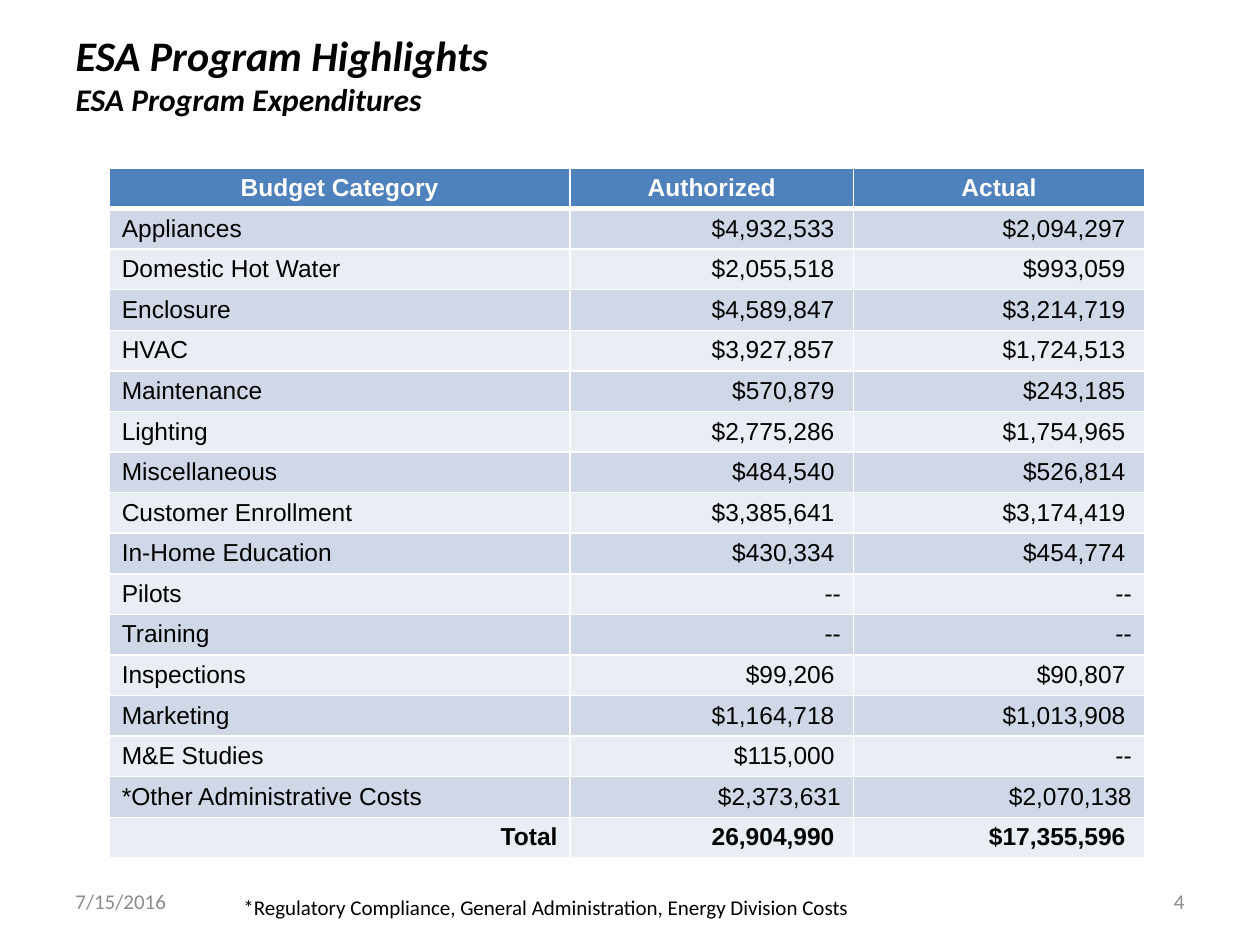
from lxml.etree import SubElement
from pptx import Presentation
from pptx.dml.color import RGBColor
from pptx.enum.text import MSO_ANCHOR, MSO_AUTO_SIZE, PP_ALIGN
from pptx.oxml.ns import qn
from pptx.util import Inches, Pt

COLORS = {
    "text": "000000", "muted": "8C8C8C", "white": "FFFFFF",
    "header": "4F81BD", "odd": "D0D8E8", "even": "E9EDF4",
}
GRID_COLUMNS, GRID_ROWS = 60, 45
TITLE_BOX = (3, 1, 39, 5)
TABLE_BOX = (5.2, 8, 49.3, 32.88)
DATE_BOX = (3, 41.7, 14, 2.4)
NUMBER_BOX = (43, 41.7, 14, 2.4)
NOTE_BOX = (11, 42.3, 31, 1.8)
COLUMN_WEIGHTS = (3.66, 2.25, 2.31)
EDGE_MARGIN, FIGURE_MARGIN = Inches(0.1), Inches(0.15)
BOTTOM_MARGIN = Inches(0.02)

HEADINGS = ("Budget Category", "Authorized", "Actual")
EXPENDITURES = [
    ("Appliances", "$4,932,533", "$2,094,297"),
    ("Domestic Hot Water", "$2,055,518", "$993,059"),
    ("Enclosure", "$4,589,847", "$3,214,719"),
    ("HVAC", "$3,927,857", "$1,724,513"),
    ("Maintenance", "$570,879", "$243,185"),
    ("Lighting", "$2,775,286", "$1,754,965"),
    ("Miscellaneous", "$484,540", "$526,814"),
    ("Customer Enrollment", "$3,385,641", "$3,174,419"),
    ("In-Home Education", "$430,334", "$454,774"),
    ("Pilots", "--", "--"),
    ("Training", "--", "--"),
    ("Inspections", "$99,206", "$90,807"),
    ("Marketing", "$1,164,718", "$1,013,908"),
    ("M&E Studies", "$115,000", "--"),
    ("*Other Administrative Costs", "$2,373,631", "$2,070,138"),
    ("Total", "26,904,990", "$17,355,596"),
]
FLUSH_ROWS = {"*Other Administrative Costs"}


def grid_box(deck, box):
    """Turn grid columns and rows into slide lengths."""
    column, row = deck.slide_width / GRID_COLUMNS, deck.slide_height / GRID_ROWS
    left, top, width, height = box
    return int(left * column), int(top * row), int(width * column), int(height * row)


def style_font(font, color, **values):
    """Set font attributes and colour."""
    for name, value in values.items():
        setattr(font, name, value)
    font.color.rgb = RGBColor.from_string(COLORS[color])


def add_title(deck, page, box):
    """Fill the title placeholder with a heading and a smaller second line."""
    title = page.shapes.title
    for name, value in zip(("left", "top", "width", "height"), grid_box(deck, box)):
        setattr(title, name, value)
    frame = title.text_frame
    frame.word_wrap = True
    frame.auto_size = MSO_AUTO_SIZE.NONE
    frame.vertical_anchor = MSO_ANCHOR.MIDDLE
    para = frame.paragraphs[0]
    para.alignment = PP_ALIGN.LEFT
    lines = (("ESA Program Highlights", 24), ("ESA Program Expenditures", 18))
    for index, (words, size) in enumerate(lines):
        if index:
            para.add_line_break()
        span = para.add_run()
        span.text = words
        style_font(span.font, "text", name="Calibri", size=Pt(size), bold=True, italic=True)


def add_label(deck, page, box, words, color, align=PP_ALIGN.LEFT, anchor=MSO_ANCHOR.MIDDLE):
    """Place one line of small text in the footer area."""
    frame = page.shapes.add_textbox(*grid_box(deck, box)).text_frame
    frame.word_wrap = True
    frame.vertical_anchor = anchor
    para = frame.paragraphs[0]
    para.alignment = align
    span = para.add_run()
    span.text = words
    style_font(span.font, color, name="Calibri", size=Pt(12))


def add_borders(cell, widths):
    """Draw white cell borders ahead of the fill element."""
    properties = cell._tc.get_or_add_tcPr()
    for index, (side, width) in enumerate(widths.items()):
        line = SubElement(properties, qn(f"a:{side}"), w=str(Pt(width)))
        fill = SubElement(line, qn("a:solidFill"))
        SubElement(fill, qn("a:srgbClr"), val=COLORS["white"])
        properties.insert(index, line)


def cell_align(row, column, last):
    """Choose the alignment for a table position."""
    if row == 0:
        return PP_ALIGN.CENTER
    return PP_ALIGN.RIGHT if column or row == last else PP_ALIGN.LEFT


def add_budget_table(deck, page, box):
    """Build the banded table of authorized and actual costs."""
    rows = [HEADINGS, *EXPENDITURES]
    last = len(rows) - 1
    left, top, width, height = grid_box(deck, box)
    table = page.shapes.add_table(len(rows), len(HEADINGS), left, top, width, height).table
    for column, weight in zip(table.columns, COLUMN_WEIGHTS):
        column.width = int(width * weight / sum(COLUMN_WEIGHTS))
    for r, values in enumerate(rows):
        table.rows[r].height = height // len(rows)
        band = "header" if r == 0 else ("even", "odd")[r % 2]
        for c, words in enumerate(values):
            cell = table.cell(r, c)
            inset = r and c and words != "--" and values[0] not in FLUSH_ROWS
            cell.margin_right = FIGURE_MARGIN if inset else EDGE_MARGIN
            cell.margin_bottom = BOTTOM_MARGIN
            cell.fill.solid()
            cell.fill.fore_color.rgb = RGBColor.from_string(COLORS[band])
            thick_top, thick_bottom = (3 if r == 1 else 1), (3 if r == 0 else 1)
            add_borders(cell, {"lnL": 1, "lnR": 1, "lnT": thick_top, "lnB": thick_bottom})
            para = cell.text_frame.paragraphs[0]
            para.alignment = cell_align(r, c, last)
            span = para.add_run()
            span.text = words
            style_font(span.font, "text" if r else "white", name="Arial", size=Pt(14),
                       bold=r in (0, last))


def main():
    """Build and save the expenditures slide."""
    deck = Presentation()
    deck.slide_width, deck.slide_height = Inches(10), Inches(7.5)
    page = deck.slides.add_slide(deck.slide_layouts[5])
    add_title(deck, page, TITLE_BOX)
    add_label(deck, page, DATE_BOX, "7/15/2016", "muted")
    add_label(deck, page, NUMBER_BOX, "4", "muted", PP_ALIGN.RIGHT)
    add_budget_table(deck, page, TABLE_BOX)
    add_label(deck, page, NOTE_BOX,
              "*Regulatory Compliance, General Administration, Energy Division Costs",
              "text", anchor=MSO_ANCHOR.TOP)
    deck.save("out.pptx")


if __name__ == "__main__":
    main()
